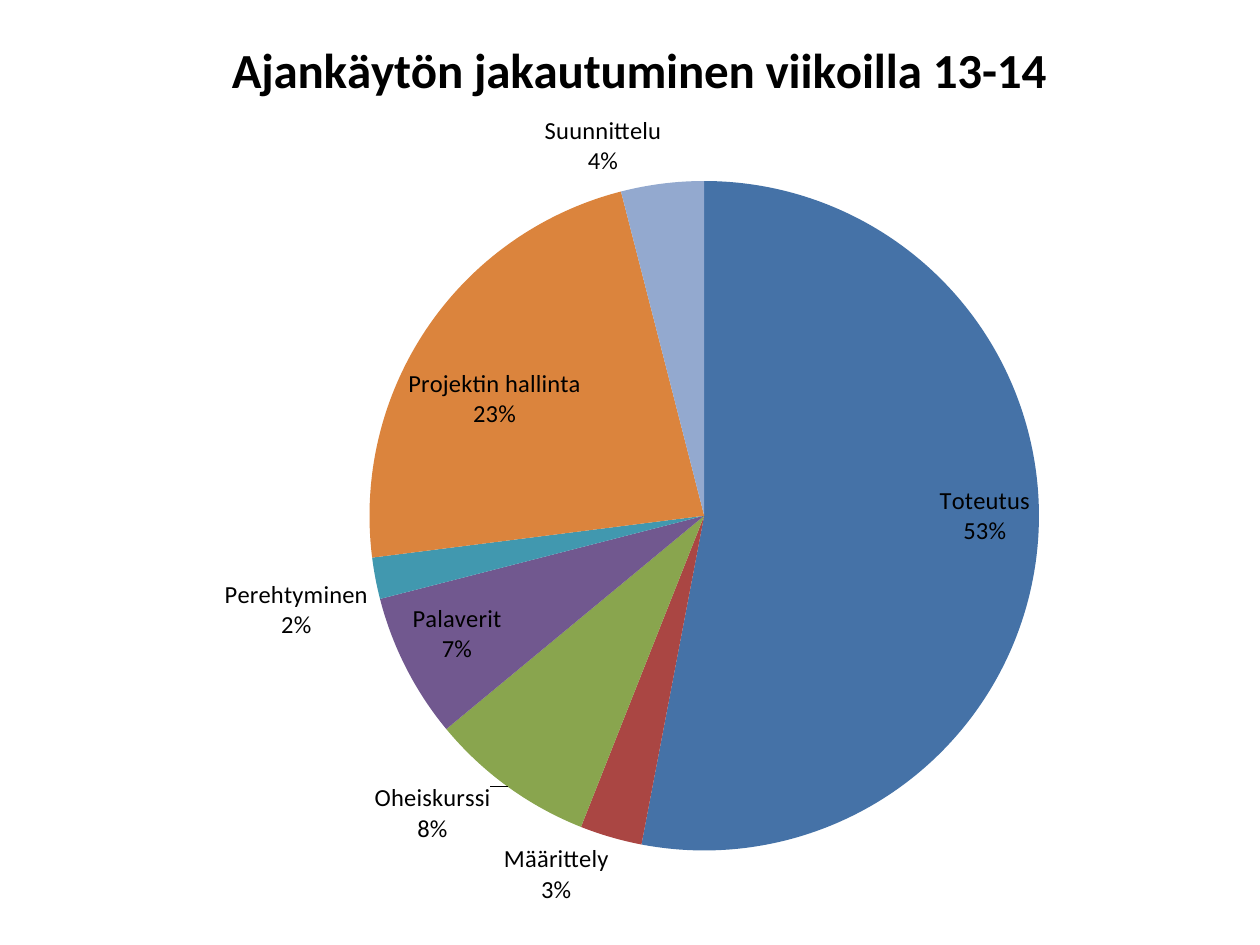
import pptx
import pptx.chart.data
import pptx.dml.color
import pptx.enum.chart
import pptx.oxml
import pptx.oxml.ns
import pptx.util

Inches = pptx.util.Inches
Pt = pptx.util.Pt
qn = pptx.oxml.ns.qn
POS = pptx.enum.chart.XL_LABEL_POSITION

FONT = "Calibri"
TITLE = "Ajankäytön jakautuminen viikoilla 13-14"
COLORS = {"text": "000000", "blue": "4572A7", "red": "AA4643", "green": "89A54E",
          "purple": "71588F", "teal": "4198AF", "orange": "DB843D", "light": "93A9CF"}
# activity, share in percent, colour, label position
SLICES = [
    ("Toteutus", 53, "blue", POS.INSIDE_END),
    ("Määrittely", 3, "red", POS.OUTSIDE_END),
    ("Oheiskurssi", 8, "green", POS.OUTSIDE_END),
    ("Palaverit", 7, "purple", POS.INSIDE_END),
    ("Perehtyminen", 2, "teal", POS.OUTSIDE_END),
    ("Projektin hallinta", 23, "orange", POS.INSIDE_END),
    ("Suunnittelu", 4, "light", POS.OUTSIDE_END),
]
# fractions of the chart size
PLOT_BOX = {"x": 0.293, "y": 0.195, "w": 0.532, "h": 0.721}
TITLE_SPOT = {"x": 0.177, "y": 0.03}
LABEL_SHIFTS = {"Oheiskurssi": {"x": -0.01, "y": -0.01},
                "Projektin hallinta": {"x": -0.02, "y": 0.04}}


def rgb(name):
    return pptx.dml.color.RGBColor.from_string(COLORS[name])


def format_font(font, **values):
    for key, value in {"name": FONT, "bold": False, **values}.items():
        setattr(font, key, value)
    font.color.rgb = rgb("text")


def manual_layout(values, edge=False, inner=False):
    """Return a c:layout element holding fractions of the chart size."""
    parts = '<c:layoutTarget val="inner"/>' if inner else ""
    if edge:
        parts += '<c:xMode val="edge"/><c:yMode val="edge"/>'
    parts += "".join(f'<c:{k} val="{v}"/>' for k, v in values.items())
    return pptx.oxml.parse_xml(
        f'<c:layout {pptx.oxml.ns.nsdecls("c")}><c:manualLayout>{parts}'
        "</c:manualLayout></c:layout>")


def replace_layout(parent, layout, before):
    for old in parent.findall(qn("c:layout")):
        parent.remove(old)
    parent.insert(before, layout)


def format_slice(point, color, position):
    point.format.fill.solid()
    point.format.fill.fore_color.rgb = rgb(color)
    point.format.line.fill.background()
    label = point.data_label
    format_font(label.font, size=Pt(14))
    label.position = position


def format_labels(series):
    """Show category above percentage on each label, and shift those that need it."""
    flags = {"showVal": "0", "showCatName": "1", "showPercent": "1"}
    for label in series._element.iter(qn("c:dLbl")):
        for tag, value in flags.items():
            label.find(qn(f"c:{tag}")).set("val", value)
        separator = pptx.oxml.parse_xml(
            f'<c:separator {pptx.oxml.ns.nsdecls("c")}>\n</c:separator>')
        label.find(qn("c:showBubbleSize")).addnext(separator)
        idx = label.find(qn("c:idx"))
        name = SLICES[int(idx.get("val"))][0]
        if name in LABEL_SHIFTS:
            idx.addnext(manual_layout(LABEL_SHIFTS[name]))


def add_time_pie(slide, left, top, width, height):
    data = pptx.chart.data.CategoryChartData()
    data.categories = [s[0] for s in SLICES]
    data.add_series("Series 1", [s[1] for s in SLICES])
    chart = slide.shapes.add_chart(pptx.enum.chart.XL_CHART_TYPE.PIE,
                                   left, top, width, height, data).chart
    format_font(chart.font, size=Pt(10))
    chart.has_legend = False
    chart.has_title = True
    tf = chart.chart_title.text_frame
    tf.text = TITLE
    format_font(tf.paragraphs[0].runs[0].font, size=Pt(28), bold=True)
    chart.chart_title.include_in_layout = False
    replace_layout(chart.chart_title._element,
                   manual_layout(TITLE_SPOT, edge=True), 1)

    plot = chart.plots[0]
    plot.vary_by_categories = True
    series = plot.series[0]
    for i, (_, _, color, position) in enumerate(SLICES):
        format_slice(series.points[i], color, position)
    format_labels(series)
    replace_layout(chart._chartSpace.find(".//" + qn("c:plotArea")),
                   manual_layout(PLOT_BOX, edge=True, inner=True), 0)


def main():
    prs = pptx.Presentation()
    prs.slide_width, prs.slide_height = Inches(10), Inches(7.5)
    slide = prs.slides.add_slide(prs.slide_layouts[6])
    add_time_pie(slide, Inches(0), Inches(0), Inches(10), Inches(7.37))
    prs.save("out.pptx")


if __name__ == "__main__":
    main()
